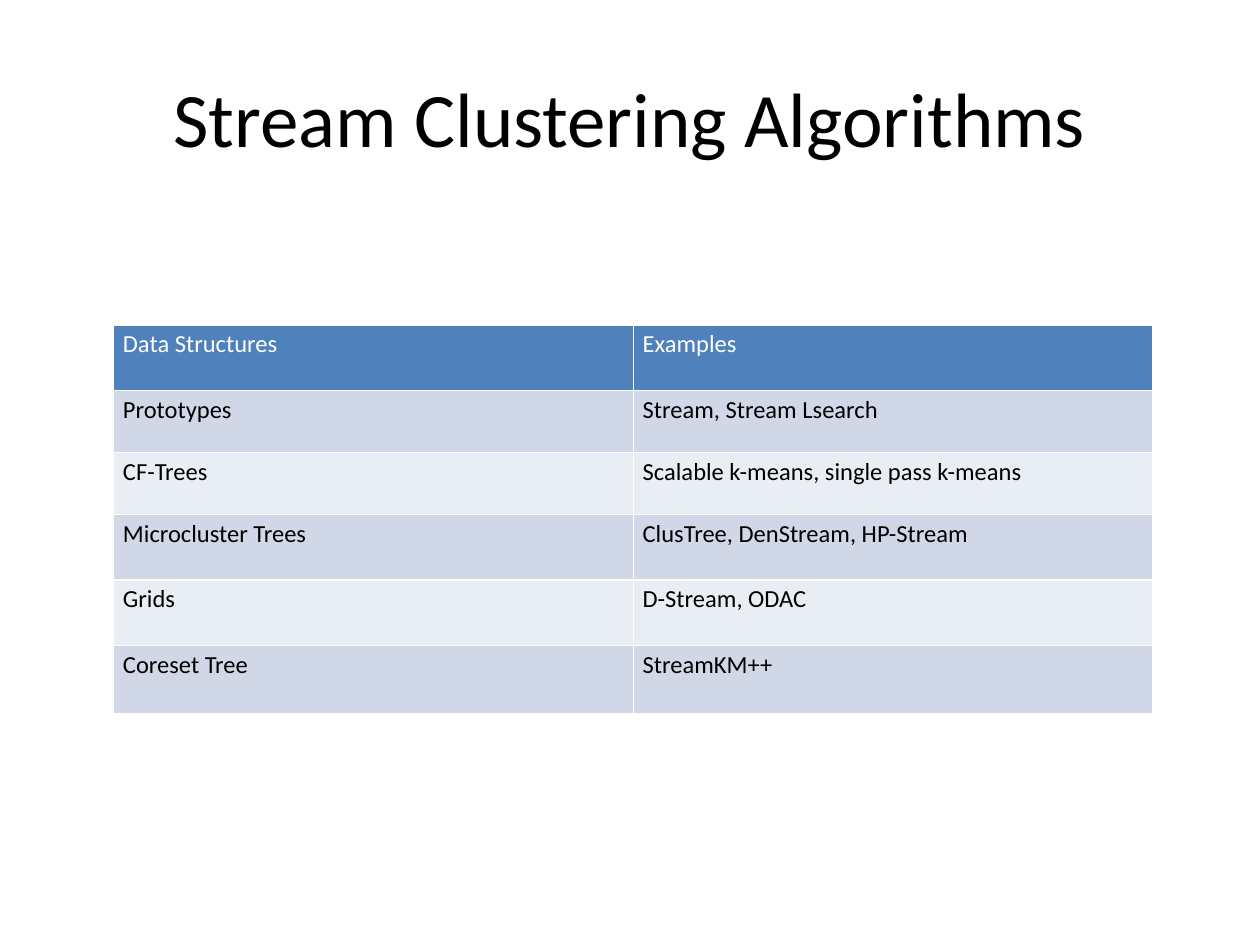
from pptx import Presentation
from pptx.dml.color import RGBColor
from pptx.enum.text import MSO_ANCHOR, PP_ALIGN
from pptx.util import Pt


def color(value):
    return RGBColor.from_string(value)


class SlideBuilder:
    font = "Calibri"
    dark = "000000"
    light = "FFFFFF"
    header_fill = "4F81BD"
    band_fills = ("E9EDF4", "D0D8E8")

    def __init__(self, deck):
        self.slide = deck.slides.add_slide(deck.slide_layouts[5])

    def add_span(self, para, text, size, ink):
        span = para.add_run()
        span.text = text
        span.font.name = self.font
        span.font.size = Pt(size)
        span.font.bold = False
        span.font.color.rgb = color(ink)

    def title(self, text, left, top, width, height):
        box = self.slide.shapes.title
        box.left, box.top = Pt(left), Pt(top)
        box.width, box.height = Pt(width), Pt(height)
        box.text_frame.vertical_anchor = MSO_ANCHOR.MIDDLE
        para = box.text_frame.paragraphs[0]
        para.alignment = PP_ALIGN.CENTER
        self.add_span(para, text, 44, self.dark)

    def table(self, rows, heights, left, top, width):
        frame = self.slide.shapes.add_table(
            len(rows), len(rows[0]), Pt(left), Pt(top), Pt(width), Pt(sum(heights)))
        grid = frame.table
        for row, height in zip(grid.rows, heights):
            row.height = Pt(height)
        for row_index, texts in enumerate(rows):
            header = row_index == 0
            fill = self.header_fill if header else self.band_fills[row_index % 2]
            ink = self.light if header else self.dark
            for column_index, text in enumerate(texts):
                self.cell(grid.cell(row_index, column_index), text, fill, ink)

    def cell(self, cell, text, fill, ink):
        cell.fill.solid()
        cell.fill.fore_color.rgb = color(fill)
        cell.margin_left = cell.margin_right = Pt(5.25)
        cell.margin_top = cell.margin_bottom = Pt(2.6)
        self.add_span(cell.text_frame.paragraphs[0], text, 14, ink)


def main():
    deck = Presentation()
    deck.slide_width, deck.slide_height = Pt(720), Pt(540)
    page = SlideBuilder(deck)
    page.title("Stream Clustering Algorithms", 36, 21.6, 648, 90)
    algorithms = [
        ("Data Structures", "Examples"),
        ("Prototypes", "Stream, Stream Lsearch"),
        ("CF-Trees", "Scalable k-means, single pass k-means"),
        ("Microcluster Trees", "ClusTree, DenStream, HP-Stream"),
        ("Grids", "D-Stream, ODAC"),
        ("Coreset Tree", "StreamKM++"),
    ]
    heights = [37.5, 35.25, 35.5, 37.5, 37.5, 39]
    page.table(algorithms, heights, 65, 185.75, 594)
    deck.save("out.pptx")


if __name__ == "__main__":
    main()
